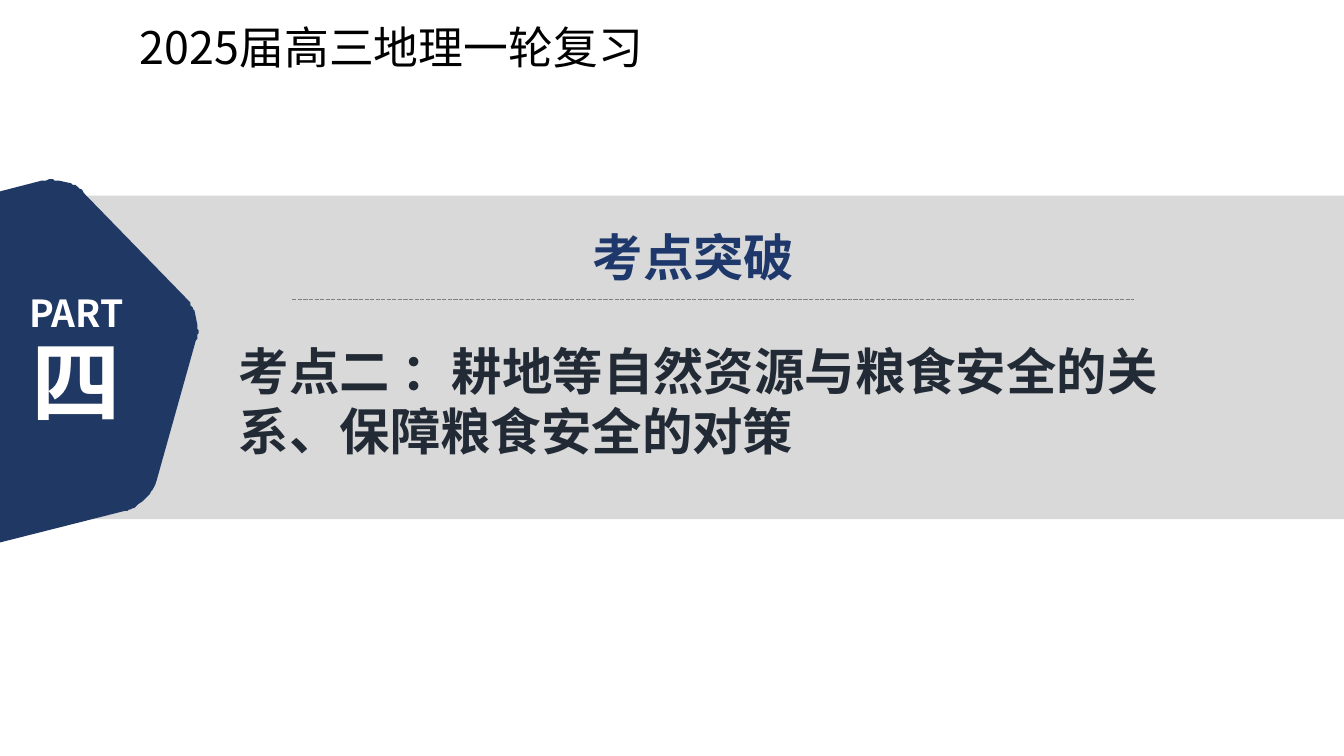
"""Build the section slide on farmland resources and food security."""
from lxml import etree
from pptx import Presentation
from pptx.dml.color import RGBColor
from pptx.enum import dml, shapes, text
from pptx.oxml import ns
from pptx.util import Pt

NAVY = "203864"
CJK_FONT = "Noto Sans CJK SC"


def color(value):
    return RGBColor.from_string(value)


def write(shape, box, words, size, font, ink, bold=True,
          align=text.PP_ALIGN.CENTER, inset=(9.6, 4.8)):
    shape.left, shape.top, shape.width, shape.height = map(Pt, box)
    frame = shape.text_frame
    frame.word_wrap = True
    frame.auto_size = text.MSO_AUTO_SIZE.NONE
    frame.vertical_anchor = text.MSO_ANCHOR.TOP
    frame.margin_left = frame.margin_right = Pt(inset[0])
    frame.margin_top = frame.margin_bottom = Pt(inset[1])
    frame.text = words
    paragraph = frame.paragraphs[0]
    paragraph.alignment = align
    paragraph.line_spacing = 1.0
    paragraph.space_before = Pt(0)
    run_font = paragraph.runs[0].font
    run_font.name, run_font.size, run_font.bold = font, Pt(size), bold
    run_font.color.rgb = color(ink)


presentation = Presentation()
presentation.slide_width, presentation.slide_height = Pt(960), Pt(540)
slide = presentation.slides.add_slide(presentation.slide_layouts[0])
title, subtitle = slide.placeholders

band = slide.shapes.add_shape(
    shapes.MSO_SHAPE.RECTANGLE, Pt(30), Pt(139.8), Pt(930), Pt(231))
band.fill.solid()
band.fill.fore_color.rgb = color("D9D9D9")

# Each step is one end point, or two control points and an end point.
badge_start = (-2.2, 388)
badge_steps = [
    [(-0.7, 136.8)],
    [(30.2, 128.9)],
    [(34.6, 128.2), (38.2, 128.2), (41.8, 128.9)],
    [(51.1, 131)],
    [(54.7, 132.5), (57.6, 134.6), (60.5, 137.5)],
    [(133.2, 213.1)],
    [(135.4, 216), (137.5, 218.9), (139, 222.5)],
    [(141.1, 231.8)],
    [(141.8, 235.4), (141.8, 239.8), (140.4, 243.4)],
    [(111.6, 343.4)],
    [(110.2, 349.2), (106.6, 354.2), (102.2, 357.8)],
    [(99.4, 360)],
    [(96.5, 362.9), (92.9, 364.3), (89.3, 365)],
]
outline = [badge_start]
for step in badge_steps:
    if len(step) == 1:
        outline += step
        continue
    a, (b, c, d) = outline[-1], step
    for t in (i / 8 for i in range(1, 9)):
        s = 1 - t
        outline.append(tuple(
            s**3 * a[k] + 3 * s * s * t * b[k] + 3 * s * t * t * c[k] + t**3 * d[k]
            for k in (0, 1)))
builder = slide.shapes.build_freeform(*outline[0], scale=Pt(1))
builder.add_line_segments(outline[1:], close=True)
badge = builder.convert_to_shape()
badge.fill.solid()
badge.fill.fore_color.rgb = color(NAVY)
for shape in (band, badge):
    shape.line.fill.background()
    shape.shadow.inherit = False

divider = slide.shapes.add_connector(
    shapes.MSO_CONNECTOR.STRAIGHT, Pt(208.8), Pt(213.8), Pt(810), Pt(213.8))
divider.line.color.rgb = color("808080")
divider.line.width = Pt(1)
divider.line.dash_style = dml.MSO_LINE.SQUARE_DOT
etree.SubElement(divider._element.spPr, ns.qn("a:effectLst"))

for box, words, size in [((-21.6, 228.2, 152.6, 87), "四", 64),
                         ((-14.4, 202.3, 138.2, 42), "PART", 26.6)]:
    label = slide.shapes.add_textbox(0, 0, 0, 0)
    write(label, box, words, size, CJK_FONT, "FFFFFF")

course = slide.shapes.add_textbox(0, 0, 0, 0)
write(course, (92.9, 10.8, 380, 46), "2025届高三地理一轮复习", 32, CJK_FONT,
      "000000", False, text.PP_ALIGN.LEFT, (7.2, 3.6))
write(title, (335.5, 157, 319.7, 53.3), "考点突破", 36, "Arial", "1E386B")
write(subtitle, (163.4, 239, 686.2, 94.3),
      "考点二 ：耕地等自然资源与粮食安全的关系、保障粮食安全的对策", 36, "Arial",
      "222A35", align=text.PP_ALIGN.LEFT, inset=(7.2, 3.6))
for shape in (title, subtitle):
    slide.shapes._spTree.append(shape._element)

presentation.save("out.pptx")
